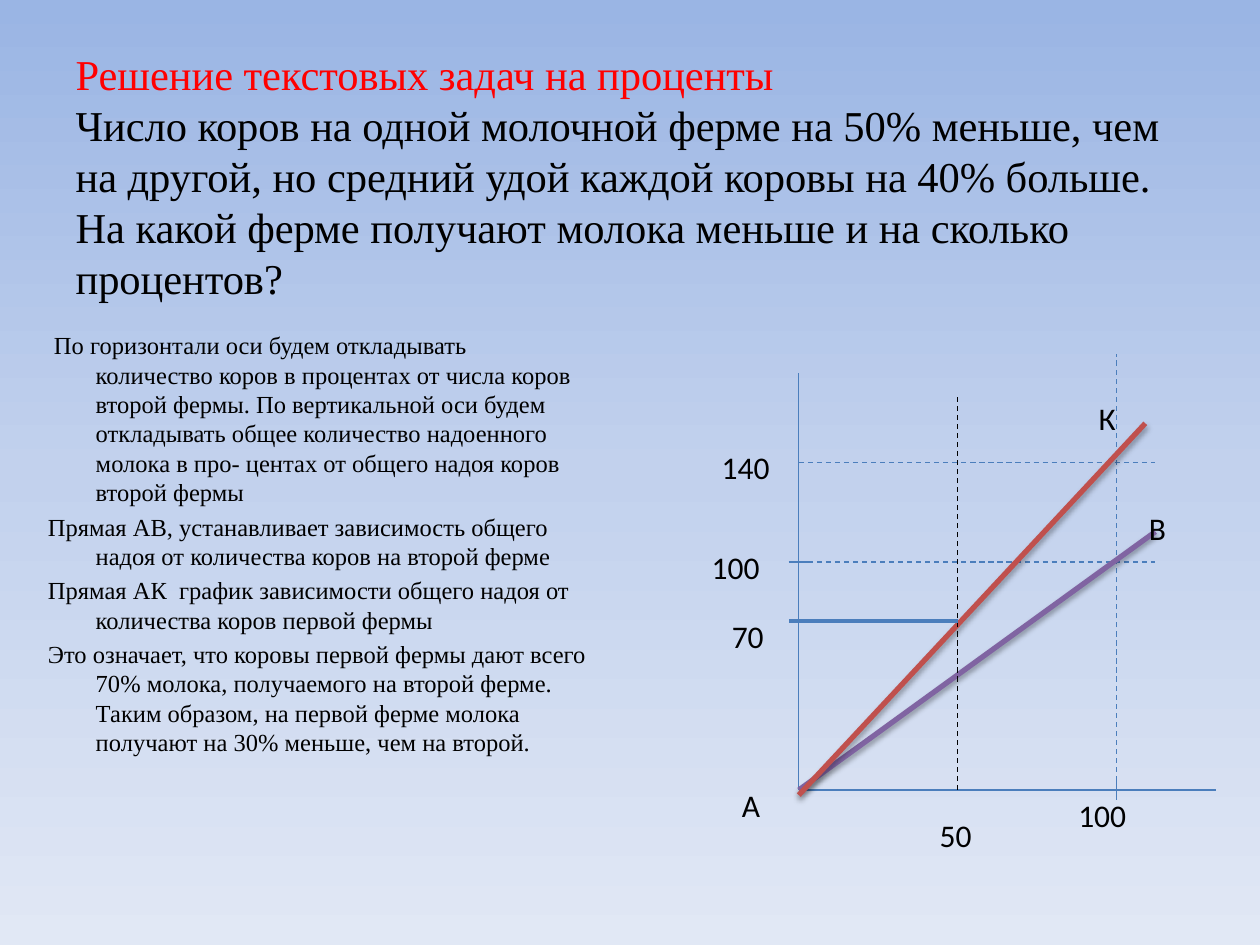
from dataclasses import dataclass

from lxml.etree import SubElement
from pptx import Presentation
from pptx.dml.color import RGBColor
from pptx.enum.dml import MSO_LINE_DASH_STYLE as Dash
from pptx.enum.shapes import MSO_CONNECTOR as Connector
from pptx.enum.text import MSO_ANCHOR as Anchor, MSO_AUTO_SIZE as AutoSize, PP_ALIGN as Align
from pptx.oxml.ns import qn
from pptx.util import Inches, Pt


@dataclass(frozen=True)
class Theme:
    text_font: str = "Times New Roman"
    label_font: str = "Calibri"
    title_size: float = 24.3
    body_size: float = 14
    label_size: float = 18
    red: str = "FF0000"
    black: str = "000000"
    axis: str = "4B7EBC"
    line_ab: str = "8064A2"
    line_ak: str = "C0504D"
    background: tuple = ((0, "9AB5E4"), (50, "C2D1ED"), (100, "E1E8F5"))


@dataclass(frozen=True)
class Line:
    x1: float
    y1: float
    x2: float
    y2: float
    color: str
    width: float = 0.75
    dashed: bool = False
    shadow: bool = False


@dataclass(frozen=True)
class Label:
    text: str
    left: float
    top: float
    width: float


THEME = Theme()
LABEL_HEIGHT = 0.4

# Chart geometry: origin, ends of the axes, and marked values
X0, Y0 = 6.34, 6.27
X_END, Y_END = 9.65, 2.96
X50, X100 = 7.6, 8.86
Y70, Y100, Y140 = 4.93, 4.46, 3.67
GUIDE_END = 9.17
TICK = 0.08

LINES = [
    Line(X0, Y0, X_END, Y0, THEME.axis),
    Line(X0, Y0, X0, Y_END, THEME.axis),
    Line(X100, Y0 - TICK, X100, Y0 + TICK, THEME.axis),
    Line(X0 - TICK, Y100, X0 + TICK, Y100, THEME.axis),
    Line(X100, Y0, X100, 2.81, THEME.axis, dashed=True),
    Line(X0, Y100, GUIDE_END, Y100, THEME.axis, dashed=True),
    Line(X0, Y0, GUIDE_END, 4.22, THEME.line_ab, 3, shadow=True),
    Line(X0, Y140, GUIDE_END, Y140, THEME.axis, dashed=True),
    Line(X0, 6.31, 9.09, 3.36, THEME.line_ak, 3, shadow=True),
    Line(X50, Y0, X50, 3.12, THEME.black, dashed=True),
    Line(X50, Y70, X0 - TICK, Y70, THEME.axis, 2.25),
]

LABELS = [
    Label("100", 8.46, 6.27, 0.87),
    Label("100", 5.55, 4.3, 0.63),
    Label("А", 5.79, 6.19, 0.55),
    Label("В", 9.02, 3.99, 0.47),
    Label("140", 5.63, 3.51, 0.63),
    Label("К", 8.62, 3.12, 0.39),
    Label("50", 7.36, 6.43, 0.55),
    Label("70", 5.71, 4.85, 0.47),
]

HEADING = "Решение текстовых задач на проценты"
PROBLEM = (
    "Число коров на одной молочной ферме на 50% меньше, чем на другой, "
    "но средний удой каждой коровы на 40% больше. На какой ферме получают "
    "молока меньше и на сколько процентов?"
)
SOLUTION = [
    " По горизонтали оси будем откладывать количество коров в процентах от числа "
    "коров второй фермы. По вертикальной оси будем откладывать общее количество "
    "надоенного молока в про- центах от общего надоя коров второй фермы",
    "Прямая АВ, устанавливает зависимость общего надоя от количества коров на второй ферме",
    "Прямая АК  график зависимости общего надоя от количества коров первой фермы",
    "Это означает, что коровы первой фермы дают всего 70% молока, получаемого на "
    "второй ферме. Таким образом, на первой ферме молока получают на 30% меньше, "
    "чем на второй.",
]


def add_text(p, text: str, *, size: float, font: str = THEME.text_font,
             color: str = THEME.black) -> None:
    r = p.add_run()
    r.text = text
    r.font.size = Pt(size)
    r.font.name = font
    r.font.color.rgb = RGBColor.from_string(color)


def place(sp, left: float, top: float, width: float, height: float) -> None:
    sp.left, sp.top = Inches(left), Inches(top)
    sp.width, sp.height = Inches(width), Inches(height)


def set_background(s) -> None:
    fill = s.background.fill
    fill.gradient()
    fill.gradient_angle = 270
    stops = s._element.find(".//" + qn("a:gsLst"))
    for stop in list(stops):
        stops.remove(stop)
    for percent, color in THEME.background:
        stop = SubElement(stops, qn("a:gs"), pos=str(percent * 1000))
        SubElement(stop, qn("a:srgbClr"), val=color)


def add_title(s) -> None:
    sp = s.shapes.title
    place(sp, 0.5, 0.3, 9, 2.19)
    tf = sp.text_frame
    tf.auto_size = AutoSize.NONE
    tf.vertical_anchor = Anchor.MIDDLE
    p = tf.paragraphs[0]
    p.alignment = Align.LEFT
    add_text(p, HEADING, size=THEME.title_size, color=THEME.red)
    p.add_line_break()
    add_text(p, PROBLEM, size=THEME.title_size)


def add_solution(s) -> None:
    sp = s.placeholders[1]
    place(sp, 0.28, 2.57, 4.49, 4.13)
    tf = sp.text_frame
    tf.auto_size = AutoSize.NONE
    for i, text in enumerate(SOLUTION):
        p = tf.add_paragraph() if i else tf.paragraphs[0]
        p.space_before = Pt(0.2 * THEME.body_size)
        pPr = p._p.get_or_add_pPr()
        pPr.set("marL", str(Inches(0.38)))
        pPr.set("indent", str(Inches(-0.38)))
        SubElement(pPr, qn("a:buNone"))
        add_text(p, text, size=THEME.body_size)


def add_line(s, line: Line) -> None:
    sp = s.shapes.add_connector(Connector.STRAIGHT, Inches(line.x1), Inches(line.y1),
                                Inches(line.x2), Inches(line.y2))
    sp.line.color.rgb = RGBColor.from_string(line.color)
    sp.line.width = Pt(line.width)
    if line.dashed:
        sp.line.dash_style = Dash.DASH
    effects = SubElement(sp._element.spPr, qn("a:effectLst"))
    if line.shadow:
        shadow = SubElement(effects, qn("a:outerShdw"), blurRad=str(Pt(3.1)),
                            dist=str(Pt(1.8)), dir="5400000", rotWithShape="0")
        color = SubElement(shadow, qn("a:srgbClr"), val=THEME.black)
        SubElement(color, qn("a:alpha"), val="35000")


def add_label(s, label: Label) -> None:
    sp = s.shapes.add_textbox(Inches(label.left), Inches(label.top),
                              Inches(label.width), Inches(LABEL_HEIGHT))
    tf = sp.text_frame
    tf.word_wrap = True
    tf.auto_size = AutoSize.SHAPE_TO_FIT_TEXT
    add_text(tf.paragraphs[0], label.text, size=THEME.label_size, font=THEME.label_font)


def main() -> None:
    prs = Presentation()
    prs.slide_width, prs.slide_height = Inches(10), Inches(7.5)
    s = prs.slides.add_slide(prs.slide_layouts[1])
    set_background(s)
    add_title(s)
    add_solution(s)
    for line in LINES:
        add_line(s, line)
    for label in LABELS:
        add_label(s, label)
    prs.save("out.pptx")


if __name__ == "__main__":
    main()
